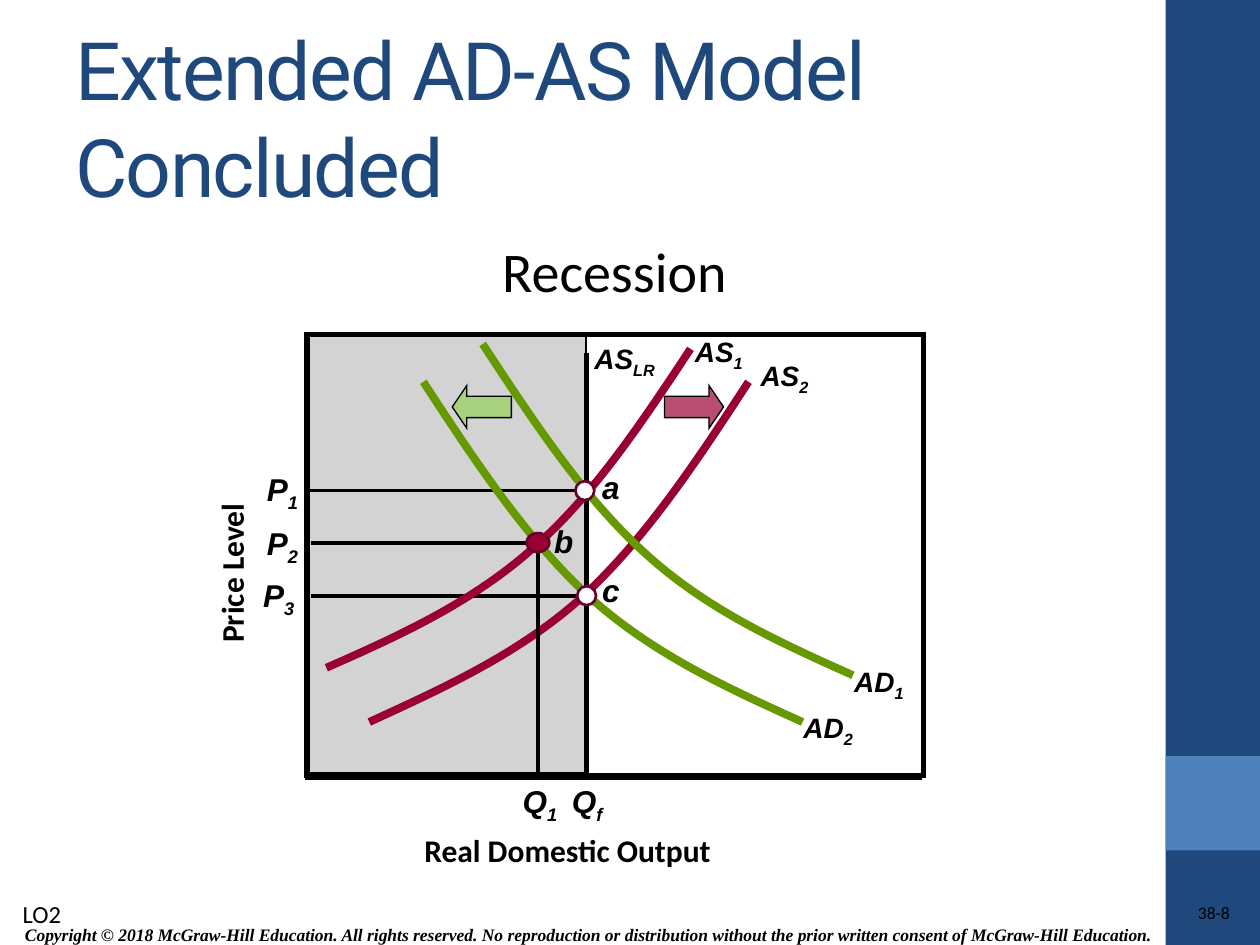
from lxml import etree
from pptx import Presentation
from pptx.dml.color import RGBColor
from pptx.enum.shapes import MSO_CONNECTOR, MSO_SHAPE
from pptx.enum.text import MSO_ANCHOR, MSO_AUTO_SIZE, PP_ALIGN
from pptx.oxml.ns import qn
from pptx.util import Pt

RECT, OVAL = MSO_SHAPE.RECTANGLE, MSO_SHAPE.OVAL
RIGHT_ARROW = MSO_SHAPE.RIGHT_ARROW
STRAIGHT = MSO_CONNECTOR.STRAIGHT
LEFT, CENTER, RIGHT = PP_ALIGN.LEFT, PP_ALIGN.CENTER, PP_ALIGN.RIGHT
MIDDLE, TOP = MSO_ANCHOR.MIDDLE, MSO_ANCHOR.TOP
FIT = MSO_AUTO_SIZE.SHAPE_TO_FIT_TEXT

BLACK = RGBColor(0, 0, 0)
WHITE = RGBColor(255, 255, 255)
NAVY = RGBColor(0x1F, 0x49, 0x7D)
BLUE = RGBColor(0x4F, 0x81, 0xBD)
GREY = RGBColor(0xD3, 0xD3, 0xD3)
CRIMSON = RGBColor(0x99, 0, 0x33)
PLUM = RGBColor(0x66, 0, 0x33)
GREEN = RGBColor(0x66, 0x99, 0)
LIME = RGBColor(0x92, 0xD0, 0x50)

TITLE = "Extended AD-AS Model Concluded"
COPYRIGHT = (
    "Copyright © 2018 McGraw-Hill Education. All rights reserved. No reproduction "
    "or distribution without the prior written consent of McGraw-Hill Education."
)

AXES = [(175.7, 190, 175.7, 445.7), (175, 444.2, 527, 444.2)]
PRICE_LINES = [(334.1, 177, 280.3), (307.4, 177.8, 310.3), (334.8, 177.8, 340.8)]
FULL_OUTPUT_LINE = (335.2, 201.6, 335.2, 442.8)
RECESSION_OUTPUT_LINE = (307.7, 311, 307.7, 445.7)
FIRST_CURVES = [
    (CRIMSON, [(427.7, 218.2), (398.2, 263.5), (368.6, 308.2), (332.6, 341.3),
               (296.6, 373.7), (253.4, 393.1), (211, 412.6)]),
    (GREEN, [(275.8, 196.6), (304.6, 240.5), (333.4, 284.4), (368.6, 316.1),
             (403.9, 348.5), (445.7, 367.2), (487.4, 385.9)]),
]
LAST_CURVES = [
    (GREEN, [(241.9, 218.2), (271.4, 263.5), (301, 308.2), (337, 341.3),
             (373, 373.7), (415.4, 393.1), (458.6, 412.6)]),
    (CRIMSON, [(394.6, 199.4), (366.5, 241.9), (338.4, 284.4), (303.1, 314.6),
               (268.6, 344.9), (227.5, 363.6), (186.5, 381.6)]),
]
ARROWS = [(379.7, CRIMSON, 69, False), (258.5, LIME, 65, True)]
DOTS = [(335.2, 340.4, 10.8, WHITE), (334.2, 280.4, 10.8, WHITE), (307.4, 310, 13, CRIMSON)]
LABELS = [
    ("P", "1", 18, 145.4, 265, 33), ("P", "2", 18, 145.4, 296.2, 33),
    ("P", "3", 18, 143.3, 325.6, 33), ("Q", "1", 18, 291.6, 443.5, 35.3),
    ("Q", "f", 18, 319.7, 443.5, 32.4), ("a", "", 18, 337, 263.8, 24.5),
    ("b", "", 18, 309.6, 294.5, 25.2), ("c", "", 18, 337, 322.6, 24.5),
    ("AS", "LR", 16, 332.6, 191.5, 51.8), ("AS", "1", 16, 390, 187.6, 42.5),
    ("AS", "2", 16, 427.5, 201.6, 42.5), ("AD", "1", 16, 481, 376.1, 43.9),
    ("AD", "2", 16, 452, 402.5, 43.9),
]

deck = Presentation()
deck.slide_width, deck.slide_height = Pt(720), Pt(540)
page = deck.slides.add_slide(deck.slide_layouts[6])


def add_text(text, left, top, width, height, size, font="Calibri", color=BLACK, bold=False,
             italic=False, align=LEFT, anchor=TOP, wrap=True, fit=False):
    box = page.shapes.add_textbox(Pt(left), Pt(top), Pt(width), Pt(height))
    frame = box.text_frame
    frame.text = text
    frame.word_wrap = wrap
    frame.vertical_anchor = anchor
    if fit:
        frame.auto_size = FIT
    para = frame.paragraphs[0]
    para.alignment = align
    style(para.runs[0], size, font, color, bold, italic)
    return box


def style(span, size, font, color, bold, italic):
    span.font.size, span.font.name = Pt(size), font
    span.font.bold, span.font.italic = bold, italic
    span.font.color.rgb = color


def add_figure(kind, left, top, width, height, fill=None, line=None, weight=1):
    figure = page.shapes.add_shape(kind, Pt(left), Pt(top), Pt(width), Pt(height))
    finish(figure, fill, line, weight)
    return figure


def finish(figure, fill, line, weight):
    figure.shadow.inherit = False
    if fill is None:
        figure.fill.background()
    else:
        figure.fill.solid()
        figure.fill.fore_color.rgb = fill
    if line is None:
        figure.line.fill.background()
    else:
        figure.line.color.rgb = line
        figure.line.width = Pt(weight)
        etree.SubElement(figure.line._get_or_add_ln(), qn("a:miter")).set("lim", "800000")


def add_line(x1, y1, x2, y2, weight, shapes=page.shapes):
    line = shapes.add_connector(STRAIGHT, Pt(x1), Pt(y1), Pt(x2), Pt(y2))
    line.line.color.rgb = BLACK
    line.line.width = Pt(weight)
    etree.SubElement(line._element.spPr, qn("a:effectLst"))


def add_curve(color, controls):
    start, *others = [(Pt(x), Pt(y)) for x, y in controls]
    builder = page.shapes.build_freeform(*start)
    builder.add_line_segments(others, close=False)
    curve = builder.convert_to_shape()
    outline = next(curve._element.iter(qn("a:path")))
    segments = outline.findall(qn("a:lnTo"))
    for first in range(0, len(segments), 3):
        bend = etree.SubElement(outline, qn("a:cubicBezTo"))
        for segment in segments[first:first + 3]:
            bend.append(segment[0])
            outline.remove(segment)
    finish(curve, None, color, 4.5)


add_figure(RECT, 666, 0, 54, 540, NAVY)
add_figure(RECT, 666, 432, 54, 54, BLUE)
add_text(COPYRIGHT, 4.1, 523.9, 663.8, 20.2, 10, "Times New Roman", bold=True, italic=True,
         align=CENTER, anchor=MIDDLE)
number = add_text("38-8", 562.3, 515, 140.4, 14.4, 10, align=RIGHT)
number_frame = number.text_frame
number_frame.paragraphs[0].line_spacing = 1.02
number_frame.margin_left = number_frame.margin_right = 0
number_frame.margin_top = number_frame.margin_bottom = 0
add_figure(RECT, 176.4, 192.2, 158.4, 249.8, GREY, BLACK)

title = add_text(TITLE, 36, 21.6, 599.8, 90, 46, "Roboto", NAVY, anchor=MIDDLE)
title.text_frame.paragraphs[0].runs[0]._r.get_or_add_rPr().set("spc", "-100")
add_text("Real Domestic Output", 235.4, 471.6, 179.3, 28.8, 18, bold=True, wrap=False, fit=True)
add_text("Recession", 174.8, 131.8, 352.8, 46, 32, align=CENTER, fit=True)
price_title = add_text("Price Level", 85, 312.8, 94.3, 28.8, 18, bold=True, wrap=False, fit=True)
price_title.rotation = 270

add_figure(RECT, 175.2, 191.1, 352.4, 252, None, BLACK, 3)
axes = page.shapes.add_group_shape()
for axis in AXES:
    add_line(*axis, 3, axes.shapes)

for name, subscript, size, left, top, width in LABELS:
    label = add_text(name, left, top, width, size * 1.6, size, "Arial", bold=True, italic=True,
                     wrap=False, fit=True)
    if subscript:
        span = label.text_frame.paragraphs[0].add_run()
        span.text = subscript
        style(span, size, "Arial", BLACK, True, True)
        span._r.get_or_add_rPr().set("baseline", "-25000")

for right, left, y in PRICE_LINES:
    add_line(right, y, left, y, 2.25)
for color, controls in FIRST_CURVES:
    add_curve(color, controls)

for left, color, opacity, flipped in ARROWS:
    arrow = add_figure(RIGHT_ARROW, left, 220.3, 33.8, 24.5, color, BLACK, 0.75)
    arrow.adjustments[0], arrow.adjustments[1] = 0.5, 0.34
    tint = arrow._element.spPr.find(qn("a:solidFill"))[0]
    etree.SubElement(tint, qn("a:alpha")).set("val", str(opacity * 1000))
    if flipped:
        arrow._element.spPr.find(qn("a:xfrm")).set("flipH", "1")

add_line(*FULL_OUTPUT_LINE, 3)
for color, controls in LAST_CURVES:
    add_curve(color, controls)
add_line(*RECESSION_OUTPUT_LINE, 2.25)
for x, y, width, color in DOTS:
    add_figure(OVAL, x - width / 2, y - 5.4, width, 10.8, color, PLUM, 1.5)
add_text("LO2", 5.8, 510.1, 38.2, 24.5, 14, fit=True)

deck.save("out.pptx")
